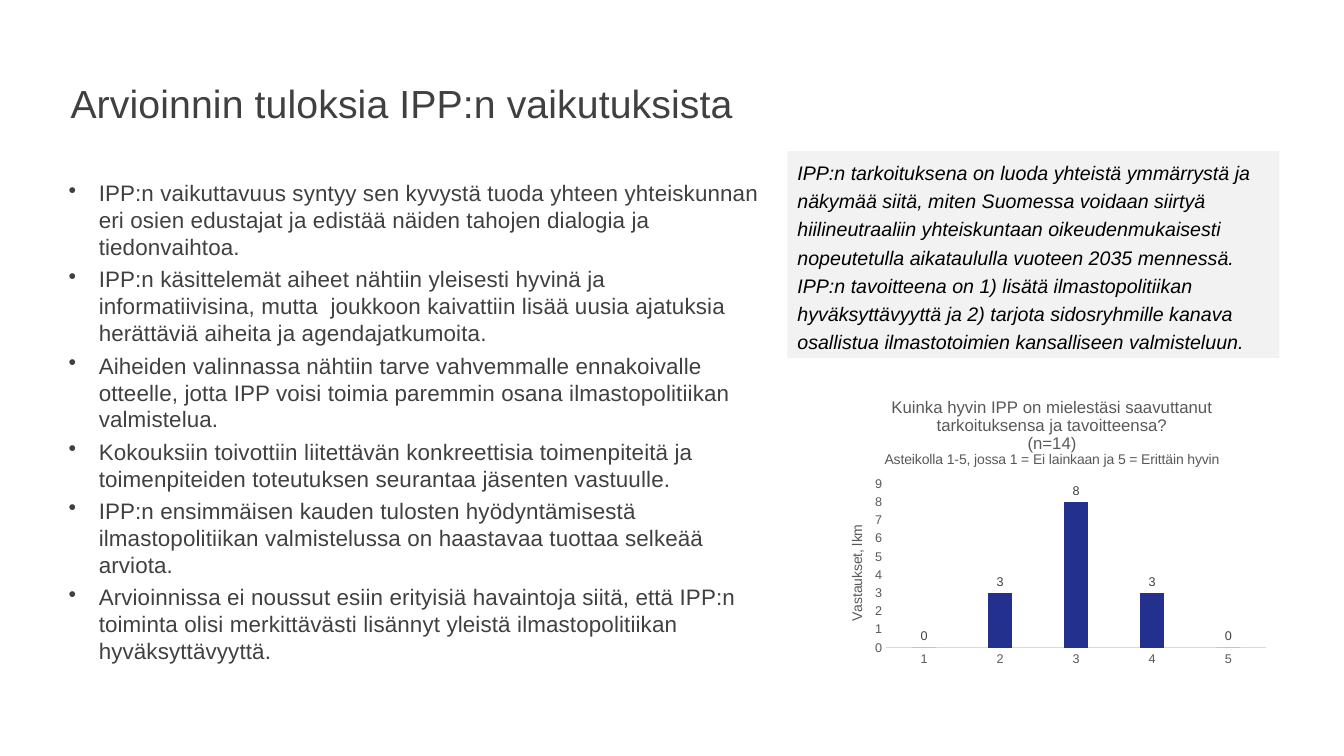
from lxml import etree
from pptx import Presentation
from pptx.chart.data import CategoryChartData
from pptx.dml.color import RGBColor
from pptx.enum.chart import XL_CHART_TYPE, XL_LABEL_POSITION, XL_TICK_MARK
from pptx.enum.shapes import MSO_SHAPE
from pptx.enum.text import MSO_ANCHOR, PP_ALIGN
from pptx.oxml.ns import qn
from pptx.util import Inches, Pt

COLUMN = XL_CHART_TYPE.COLUMN_CLUSTERED
OUTSIDE = XL_LABEL_POSITION.OUTSIDE_END
NO_TICK = XL_TICK_MARK.NONE
RECT = MSO_SHAPE.RECTANGLE
TOP = MSO_ANCHOR.TOP
LEFT = PP_ALIGN.LEFT
FACE = "Arial"
DARK, GREY, BLACK = "404040", "595959", "000000"
BLUE, PALE, RULE = "23308E", "F2F2F2", "D9D9D9"

TITLE = "Arvioinnin tuloksia IPP:n vaikutuksista"
POINTS = [
    "IPP:n vaikuttavuus syntyy sen kyvystä tuoda yhteen yhteiskunnan eri osien "
    "edustajat ja edistää näiden tahojen dialogia ja tiedonvaihtoa.",
    "IPP:n käsittelemät aiheet nähtiin yleisesti hyvinä ja informatiivisina, mutta  "
    "joukkoon kaivattiin lisää uusia ajatuksia herättäviä aiheita ja agendajatkumoita.",
    "Aiheiden valinnassa nähtiin tarve vahvemmalle ennakoivalle otteelle, jotta IPP "
    "voisi toimia paremmin osana ilmastopolitiikan valmistelua.",
    "Kokouksiin toivottiin liitettävän konkreettisia toimenpiteitä ja toimenpiteiden "
    "toteutuksen seurantaa jäsenten vastuulle.",
    "IPP:n ensimmäisen kauden tulosten hyödyntämisestä ilmastopolitiikan "
    "valmistelussa on haastavaa tuottaa selkeää arviota.",
    "Arvioinnissa ei noussut esiin erityisiä havaintoja siitä, että IPP:n toiminta "
    "olisi merkittävästi lisännyt yleistä ilmastopolitiikan hyväksyttävyyttä.",
]
PURPOSE = (
    "IPP:n tarkoituksena on luoda yhteistä ymmärrystä ja näkymää siitä, miten "
    "Suomessa voidaan siirtyä hiilineutraaliin yhteiskuntaan oikeudenmukaisesti "
    "nopeutetulla aikataululla vuoteen 2035 mennessä. IPP:n tavoitteena on 1) lisätä "
    "ilmastopolitiikan hyväksyttävyyttä ja 2) tarjota sidosryhmille kanava osallistua "
    "ilmastotoimien kansalliseen valmisteluun."
)
HEADS = [
    ("Kuinka hyvin IPP on mielestäsi saavuttanut tarkoituksensa ja tavoitteensa?", 12),
    ("(n=14)", 12),
    ("Asteikolla 1-5, jossa 1 = Ei lainkaan ja 5 = Erittäin hyvin", 10),
]
VOTES = {"1": 0, "2": 3, "3": 8, "4": 3, "5": 0}


def rgb(code):
    return RGBColor.from_string(code)


def style(font, size, color):
    font.name = FACE
    font.size = Pt(size)
    font.bold = False
    font.color.rgb = rgb(color)


def add_box(slide, *area):
    frame = slide.shapes.add_textbox(*map(Inches, area)).text_frame
    frame.word_wrap = True
    frame.margin_left = frame.margin_right = 0
    frame.margin_top = frame.margin_bottom = 0
    return frame


def fill_paras(frame, lines):
    """Write (text, size, colour) lines and yield their paragraphs."""
    for i, (text, size, color) in enumerate(lines):
        para = frame.add_paragraph() if i else frame.paragraphs[0]
        para.add_run().text = text
        style(para.font, size, color)
        yield para


def track(para):
    """Spread the letters by a tenth of a point."""
    for run in para.runs:
        run._r.get_or_add_rPr().set("spc", "10")


def add_title(slide):
    frame = add_box(slide, 0.7, 0.84, 9.84, 0.87)
    for para in fill_paras(frame, [(TITLE, 28, DARK)]):
        para.line_spacing = 0.9
        track(para)


def add_points(slide):
    frame = add_box(slide, 0.68, 1.78, 6.93, 5.2)
    lines = [(text, 16, DARK) for text in POINTS]
    for i, para in enumerate(fill_paras(frame, lines)):
        props = para._p.get_or_add_pPr()
        props.set("marL", str(Inches(0.3)))
        props.set("indent", str(Inches(-0.3)))
        bullet = etree.Element(qn("a:buChar"), char="•")
        props.insert_element_before(bullet, "a:tabLst", "a:defRPr", "a:extLst")
        para.space_before = Pt(4 if i else 0)
        track(para)


def add_panel(slide):
    panel = slide.shapes.add_shape(RECT, *map(Inches, (7.81, 1.5, 4.88, 2.05)))
    panel.shadow.inherit = False
    panel.fill.solid()
    panel.fill.fore_color.rgb = rgb(PALE)
    panel.line.fill.background()
    frame = panel.text_frame
    frame.word_wrap = True
    frame.vertical_anchor = TOP
    for para in fill_paras(frame, [(PURPOSE, 14, BLACK)]):
        para.font.italic = True
        para.alignment = LEFT
        para.line_spacing = 1.2


def place(node, index, **sides):
    """Fix a chart part at fractions of the chart's size."""
    for old in node.findall(qn("c:layout")):
        node.remove(old)
    layout = etree.Element(qn("c:layout"))
    manual = etree.SubElement(layout, qn("c:manualLayout"))
    if "w" in sides:
        etree.SubElement(manual, qn("c:layoutTarget"), val="inner")
    for side in "xy":
        etree.SubElement(manual, qn(f"c:{side}Mode"), val="edge")
    for side, value in sides.items():
        etree.SubElement(manual, qn(f"c:{side}"), val=str(value))
    node.insert(index, layout)


def set_axis(axis):
    axis.has_major_gridlines = False
    axis.major_tick_mark = axis.minor_tick_mark = NO_TICK
    style(axis.tick_labels.font, 9, GREY)


def set_heads(chart):
    chart.has_title = True
    head = chart.chart_title
    lines = [(text, size, GREY) for text, size in HEADS]
    list(fill_paras(head.text_frame, lines))
    place(head._element, 1, x=0.13, y=0.05)

    label = chart.value_axis.axis_title
    list(fill_paras(label.text_frame, [("Vastaukset, lkm", 10, GREY)]))
    body = label.text_frame._txBody.bodyPr
    body.set("rot", "-5400000")
    body.set("vert", "horz")
    place(label._element, 1, x=0.05, y=0.49)


def add_votes(slide):
    data = CategoryChartData()
    data.categories = list(VOTES)
    data.add_series("Series 1", list(VOTES.values()))
    area = map(Inches, (8.16, 3.76, 4.49, 2.9))
    chart = slide.shapes.add_chart(COLUMN, *area, data).chart
    chart.has_legend = False
    style(chart.font, 10, BLACK)

    cats, vals = chart.category_axis, chart.value_axis
    set_axis(cats)
    set_axis(vals)
    cats.format.line.color.rgb = rgb(RULE)
    cats.format.line.width = Pt(0.75)
    vals.format.line.fill.background()
    vals.minimum_scale, vals.maximum_scale, vals.major_unit = 0, 9, 1

    plot = chart.plots[0]
    plot.gap_width, plot.overlap = 219, -27
    plot.vary_by_categories = False
    bars = plot.series[0]
    bars.format.fill.solid()
    bars.format.fill.fore_color.rgb = rgb(BLUE)
    labels = bars.data_labels
    labels.show_value = True
    labels.position = OUTSIDE
    style(labels.font, 9, DARK)

    set_heads(chart)
    place(chart._chartSpace.chart.plotArea, 0, x=0.14, y=0.36, w=0.84, h=0.56)


def main():
    deck = Presentation()
    deck.slide_width, deck.slide_height = Inches(13.33), Inches(7.5)
    slide = deck.slides.add_slide(deck.slide_layouts[6])
    add_title(slide)
    add_points(slide)
    add_votes(slide)
    add_panel(slide)
    deck.save("out.pptx")


if __name__ == "__main__":
    main()
